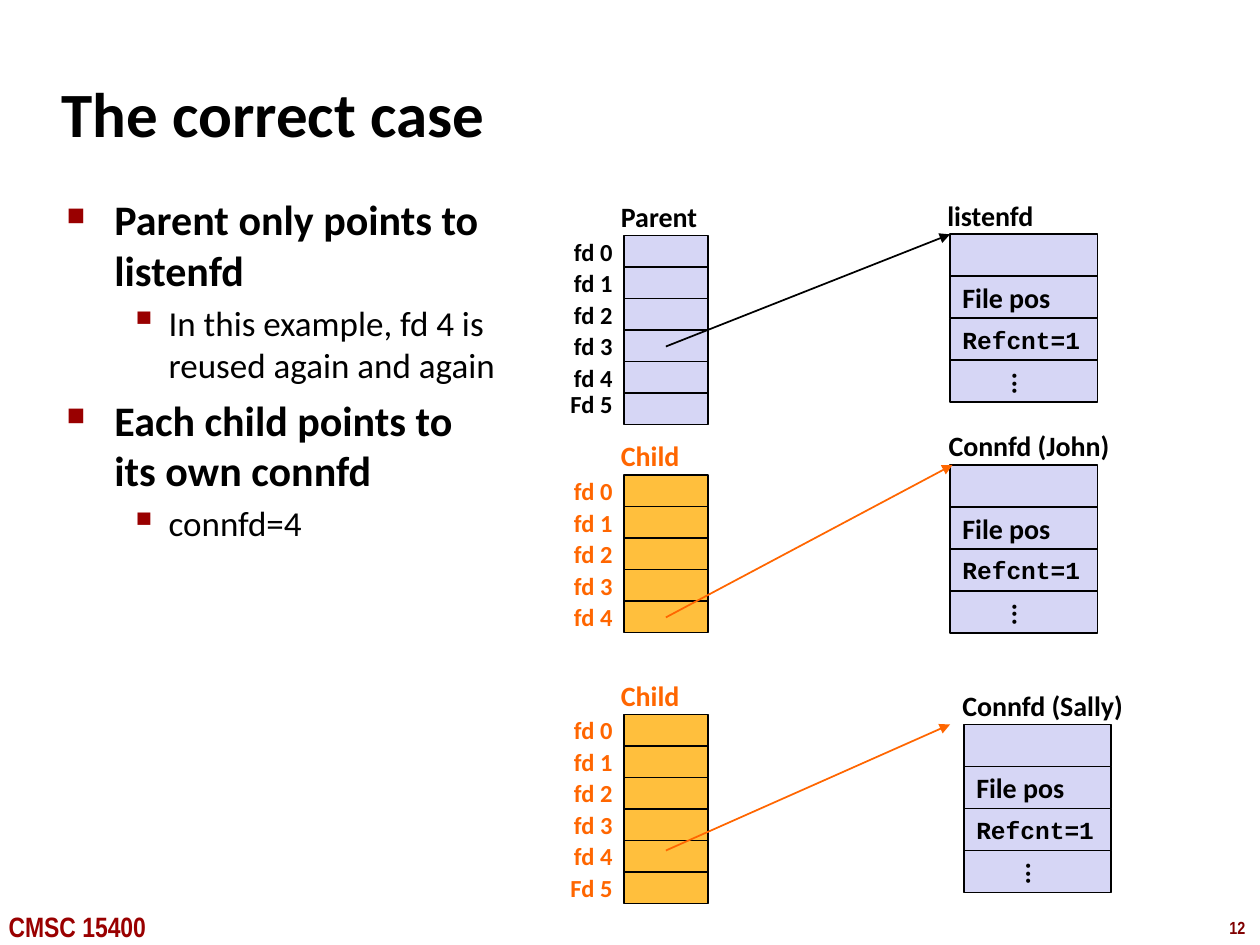
from lxml import etree
from pptx import Presentation
from pptx import util as u
from pptx.dml.color import RGBColor
from pptx.enum import shapes, text
from pptx.oxml import ns

BLACK = RGBColor(0x00, 0x00, 0x00)
ORANGE = RGBColor(0xFF, 0x66, 0x00)
AMBER = RGBColor(0xFF, 0xBF, 0x3D)
LAVENDER = RGBColor(0xD6, 0xD6, 0xF5)
CRIMSON = RGBColor(0x99, 0x00, 0x00)
MAROON = RGBColor(0x80, 0x00, 0x00)

FD_ROW, FD_COL = 0.25, 0.67
FILE_ROW, FILE_COL = 1 / 3, 1.17
NAME_LEFT, FD_LEFT, FILE_LEFT = 4.29, 4.95, 7.54
HEADING_RISE, HEADING_ROW = 0.34, 0.37

deck = Presentation()
deck.slide_width, deck.slide_height = u.Inches(10), u.Inches(7.5)
slide = deck.slides.add_slide(deck.slide_layouts[6])


def write(place, words, size, color=BLACK, font="Calibri", align=text.PP_ALIGN.LEFT,
          fill=None, anchor=text.MSO_ANCHOR.MIDDLE):
    area = [u.Inches(length) for length in place]
    if fill is None:
        box = slide.shapes.add_textbox(*area)
    else:
        box = slide.shapes.add_shape(shapes.MSO_SHAPE.RECTANGLE, *area)
        box.shadow.inherit = False
        box.fill.solid()
        box.fill.fore_color.rgb = fill
        box.line.color.rgb = BLACK
        box.line.width = u.Pt(1)
    frame = box.text_frame
    frame.word_wrap = False
    frame.vertical_anchor = anchor
    if words:
        frame.text = words
        line = frame.paragraphs[0]
        line.alignment = align
        style = line.runs[0].font
        style.name, style.size, style.bold = font, u.Pt(size), True
        style.color.rgb = color
    return box


TOP = text.MSO_ANCHOR.TOP
write((9.66, 7.23, 0.34, 0.27), "12", 10, MAROON, "Arial Narrow", anchor=TOP)
write((-0.03, 7.17, 1.42, 0.37), "CMSC 15400", 16, CRIMSON, "Arial Narrow", anchor=TOP)
write((0.39, 0.48, 8.3, 0.83), "The correct case", 36)

points = [
    (0, "Parent only points to listenfd"),
    (1, "In this example, fd 4 is reused again and again"),
    (0, "Each child points to its own connfd"),
    (1, "connfd=4"),
]
levels = [(24, 0.38, 0.38, "■", 60), (20, 0.81, 0.31, "▪", 110)]
body = slide.shapes.add_textbox(u.Inches(0.43), u.Inches(1.49), u.Inches(3.65), u.Inches(5.44))
body.text_frame.word_wrap = True
for index, (level, words) in enumerate(points):
    size, margin, hang, mark, share = levels[level]
    point = body.text_frame.paragraphs[0] if index == 0 else body.text_frame.add_paragraph()
    point.text = words
    point.level = level
    if index:
        point.space_before = u.Pt(size * 0.2)
    props = point._p.get_or_add_pPr()
    props.set("marL", str(u.Inches(margin)))
    props.set("indent", str(-u.Inches(hang)))
    tint = etree.SubElement(props, ns.qn("a:buClr"))
    etree.SubElement(tint, ns.qn("a:srgbClr"), val=str(CRIMSON))
    etree.SubElement(props, ns.qn("a:buSzPct"), val=str(share * 1000))
    etree.SubElement(props, ns.qn("a:buChar"), char=mark)
    style = point.runs[0].font
    style.name, style.size, style.bold = "Calibri", u.Pt(size), level == 0
    style.color.rgb = BLACK

open_files = [
    ("listenfd", FILE_LEFT, 1.86, 0.12),
    ("Connfd (John)", FILE_LEFT, 3.69, 0.11),
    ("Connfd (Sally)", FILE_LEFT + 0.11, 5.75, 0.11),
]
for heading, left, top, outdent in open_files:
    fields = [("", 16, "Calibri"), ("File pos", 16, "Calibri"),
              ("Refcnt=1", 14, "Courier New"), ("...", 16, "Calibri")]
    for row, (field, size, font) in enumerate(fields):
        cell = write((left, top + row * FILE_ROW, FILE_COL, FILE_ROW), field, size,
                     font=font, fill=LAVENDER)
        if field == "...":
            cell.element.txBody.find(ns.qn("a:bodyPr")).set("vert", "eaVert")
    write((left - outdent, top - HEADING_RISE, 1.5, HEADING_ROW), heading, 16)

FDS = ["fd 0", "fd 1", "fd 2", "fd 3", "fd 4", "Fd 5"]
processes = [
    ("Parent", 1.87, FDS, BLACK, LAVENDER, 0.04),
    ("Child", 3.77, FDS[:5], ORANGE, AMBER, 0),
    ("Child", 5.67, FDS, ORANGE, AMBER, 0),
]
for heading, top, fds, color, fill, lift in processes:
    for row, fd in enumerate(fds):
        y = top + row * FD_ROW
        write((FD_LEFT, y, FD_COL, FD_ROW), "", 14, fill=fill)
        name_top = y - lift if fd == "Fd 5" else y
        write((NAME_LEFT, name_top, FD_COL, FD_ROW), fd, 14, color,
              align=text.PP_ALIGN.RIGHT)
    write((FD_LEFT - 0.12, top - HEADING_RISE, 0.81, HEADING_ROW), heading, 16, color)

pointers = [(2.75, 7.54, 1.86, BLACK), (4.9, 7.56, 3.69, ORANGE), (6.75, 7.54, 5.75, ORANGE)]
for start, end_x, end_y, color in pointers:
    pointer = slide.shapes.add_connector(
        shapes.MSO_CONNECTOR.STRAIGHT, u.Inches(FD_LEFT + FD_COL / 2), u.Inches(start),
        u.Inches(end_x), u.Inches(end_y))
    pointer.line.color.rgb = color
    pointer.line.width = u.Pt(1)
    etree.SubElement(pointer.line._get_or_add_ln(), ns.qn("a:tailEnd"), type="triangle")
    etree.SubElement(pointer.element.spPr, ns.qn("a:effectLst"))

deck.save("out.pptx")
